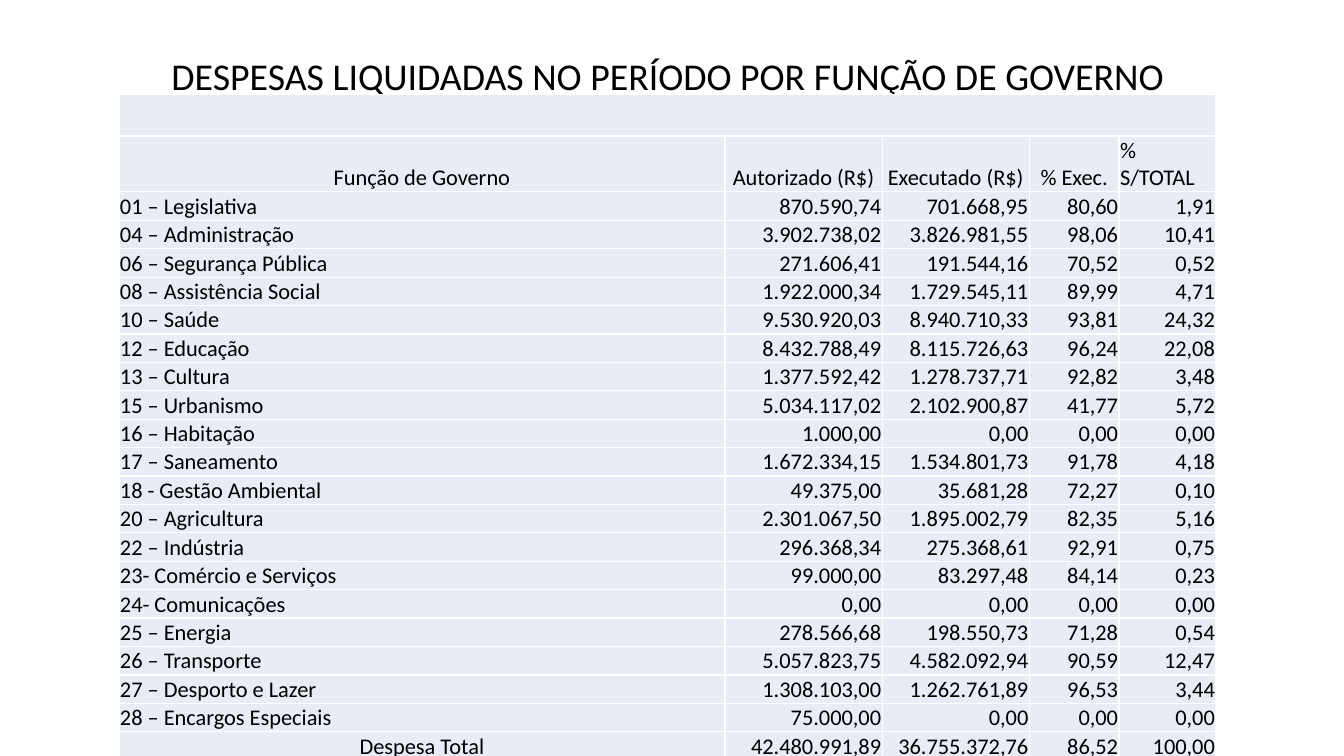
from pptx import Presentation
from pptx.dml.color import RGBColor
from pptx.enum.text import MSO_ANCHOR, PP_ALIGN
from pptx.util import Inches, Pt

# Content
TITLE = "DESPESAS LIQUIDADAS NO PERÍODO POR FUNÇÃO DE GOVERNO"
HEAD = ("Função de Governo", "Autorizado (R$)", "Executado (R$)", "% Exec.", "% S/TOTAL")
ITEMS = [
    ("01 – Legislativa", "870.590,74", "701.668,95", "80,60", "1,91"),
    ("04 – Administração", "3.902.738,02", "3.826.981,55", "98,06", "10,41"),
    ("06 – Segurança Pública", "271.606,41", "191.544,16", "70,52", "0,52"),
    ("08 – Assistência Social", "1.922.000,34", "1.729.545,11", "89,99", "4,71"),
    ("10 – Saúde", "9.530.920,03", "8.940.710,33", "93,81", "24,32"),
    ("12 – Educação", "8.432.788,49", "8.115.726,63", "96,24", "22,08"),
    ("13 – Cultura", "1.377.592,42", "1.278.737,71", "92,82", "3,48"),
    ("15 – Urbanismo", "5.034.117,02", "2.102.900,87", "41,77", "5,72"),
    ("16 – Habitação", "1.000,00", "0,00", "0,00", "0,00"),
    ("17 – Saneamento", "1.672.334,15", "1.534.801,73", "91,78", "4,18"),
    ("18 - Gestão Ambiental", "49.375,00", "35.681,28", "72,27", "0,10"),
    ("20 – Agricultura", "2.301.067,50", "1.895.002,79", "82,35", "5,16"),
    ("22 – Indústria", "296.368,34", "275.368,61", "92,91", "0,75"),
    ("23- Comércio e Serviços", "99.000,00", "83.297,48", "84,14", "0,23"),
    ("24- Comunicações", "0,00", "0,00", "0,00", "0,00"),
    ("25 – Energia", "278.566,68", "198.550,73", "71,28", "0,54"),
    ("26 – Transporte", "5.057.823,75", "4.582.092,94", "90,59", "12,47"),
    ("27 – Desporto e Lazer", "1.308.103,00", "1.262.761,89", "96,53", "3,44"),
    ("28 – Encargos Especiais", "75.000,00", "0,00", "0,00", "0,00"),
]
TOTAL = ("Despesa Total", "42.480.991,89", "36.755.372,76", "86,52", "100,00")

# Style and grid
FONT = "Calibri"
BLACK = RGBColor(0x00, 0x00, 0x00)
PALE = RGBColor(0xE9, 0xEB, 0xF5)
LEFT, MID, RIGHT = PP_ALIGN.LEFT, PP_ALIGN.CENTER, PP_ALIGN.RIGHT
TOP, BOTTOM = MSO_ANCHOR.TOP, MSO_ANCHOR.BOTTOM
COLS = (6.01, 1.56, 1.46, 0.89, 0.96)
ROWS = (0.41, 0.44) + (0.28,) * len(ITEMS) + (0.29,)


def write(para, text, size, align):
    para.alignment = align
    run = para.add_run()
    run.text = text
    run.font.name = FONT
    run.font.size = Pt(size)
    run.font.color.rgb = BLACK


def fill_row(table, row, texts, aligns):
    for col, (text, align) in enumerate(zip(texts, aligns)):
        cell = table.cell(row, col)
        cell.margin_left = cell.margin_right = cell.margin_top = Inches(0.01)
        cell.margin_bottom = 0
        cell.vertical_anchor = BOTTOM
        write(cell.text_frame.paragraphs[0], text, 16, align)


def main():
    deck = Presentation()
    deck.slide_width, deck.slide_height = Inches(13.33), Inches(7.5)
    slide = deck.slides.add_slide(deck.slide_layouts[5])

    # Title, set in from the left edge
    title = slide.shapes.title
    title.left, title.top = Inches(0.92), Inches(0.4)
    title.width, title.height = Inches(11.5), Inches(1.45)
    frame = title.text_frame
    frame.word_wrap = True
    frame.vertical_anchor = TOP
    frame.margin_left, frame.margin_top = Inches(0.78), Inches(0.17)
    para = frame.paragraphs[0]
    para.line_spacing = 0.9
    write(para, TITLE, 27, LEFT)

    # Table
    table = slide.shapes.add_table(
        len(ROWS), len(COLS), Inches(1.18), Inches(0.94),
        Inches(sum(COLS)), Inches(sum(ROWS))).table
    table.first_row = table.horz_banding = False
    for col, width in zip(table.columns, COLS):
        col.width = Inches(width)
    for row, height in zip(table.rows, ROWS):
        row.height = Inches(height)
    for cell in table.iter_cells():
        cell.fill.solid()
        cell.fill.fore_color.rgb = PALE

    # Blank band, column heads, items, total
    table.cell(0, 0).merge(table.cell(0, len(COLS) - 1))
    nums = (RIGHT,) * 4
    fill_row(table, 1, HEAD, (MID,) * 4 + (LEFT,))
    for row, item in enumerate(ITEMS, 2):
        fill_row(table, row, item, (LEFT,) + nums)
    fill_row(table, len(ROWS) - 1, TOTAL, (MID,) + nums)

    deck.save("out.pptx")


if __name__ == "__main__":
    main()
